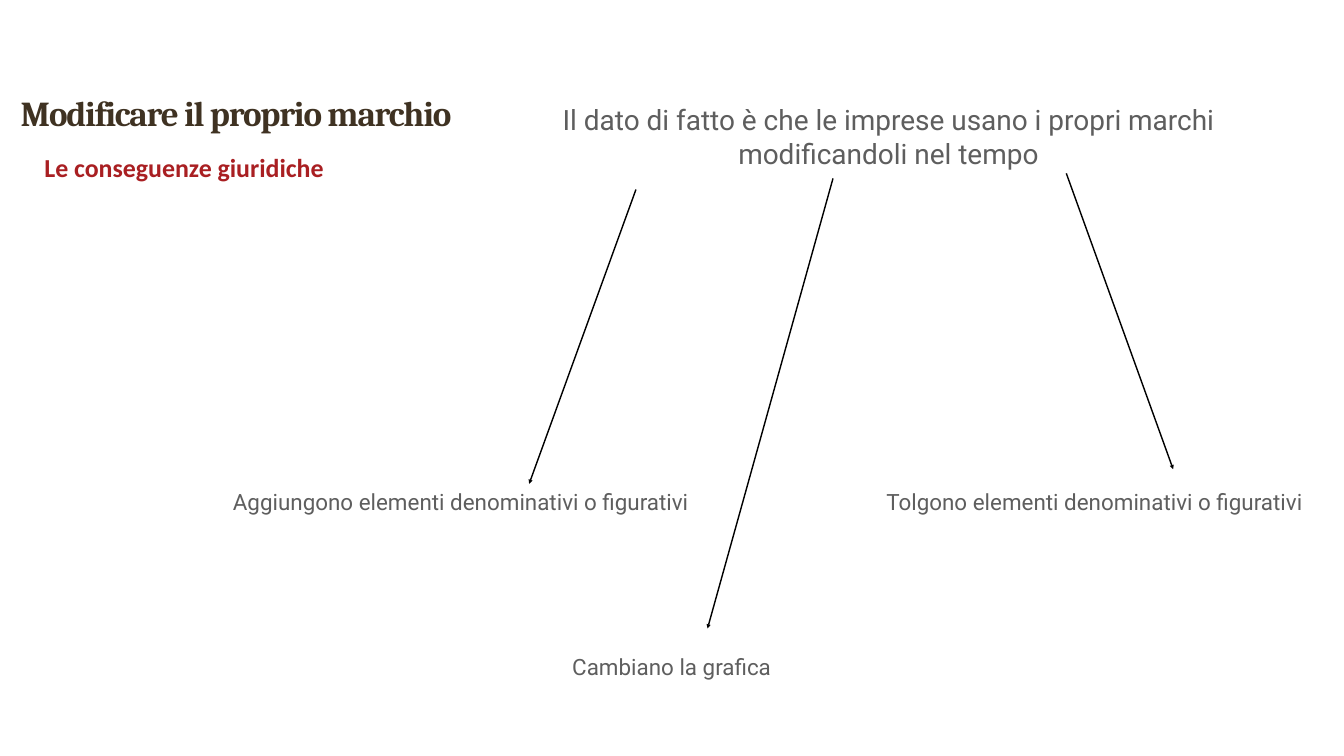
from lxml import etree
from pptx import Presentation
from pptx import util as u
from pptx.dml.color import RGBColor
from pptx.enum import shapes, text
from pptx.oxml import ns

PX = 9144  # EMU per px, 100 px to the inch
WIDTH, HEIGHT = 2667, 1500
INSET = 6
GREY, BROWN, RED, BLACK = "5E5E5E", "3F3222", "A91F22", "000000"


def px(length):
    return u.Emu(length * PX)


def colour(value):
    return RGBColor.from_string(value)


def add_text(page, words, left, top, width, height, *, size, font="Roboto",
             fill=GREY, bold=False, align=text.PP_ALIGN.CENTER,
             anchor=text.MSO_ANCHOR.MIDDLE, line_spacing=None, tracking=None):
    box = page.shapes.add_textbox(px(left), px(top), px(width), px(height))
    frame = box.text_frame
    frame.word_wrap = True
    frame.vertical_anchor = anchor
    frame.margin_left = frame.margin_right = px(INSET)
    frame.margin_top = frame.margin_bottom = px(INSET)
    para = frame.paragraphs[0]
    para.alignment = align
    if line_spacing:
        para.line_spacing = line_spacing
    span = para.add_run()
    span.text = words
    span.font.name = font
    span.font.size = u.Pt(size)
    span.font.bold = bold
    span.font.color.rgb = colour(fill)
    if tracking is not None:
        span.font._element.set("spc", str(round(tracking * 100)))


def add_arrow(page, start, end):
    arrow = page.shapes.add_connector(
        shapes.MSO_CONNECTOR.STRAIGHT, *map(px, start + end))
    arrow.line.color.rgb = colour(BLACK)
    arrow.line.width = u.Pt(2)
    etree.SubElement(arrow.line._get_or_add_ln(), ns.qn("a:tailEnd"),
                     type="triangle")
    etree.SubElement(arrow._element.spPr, ns.qn("a:effectLst"))


def add_heading(page, left, top):
    """Slide title with its subtitle below."""
    add_text(page, "Modificare il proprio marchio", left, top, 943, 106,
             size=50, font="Cambria", fill=BROWN, bold=True,
             align=text.PP_ALIGN.LEFT, anchor=text.MSO_ANCHOR.BOTTOM,
             line_spacing=0.8, tracking=-1.7)
    add_text(page, "Le conseguenze giuridiche", left + 47, top + 130, 602, 119,
             size=37, font="Calibri", fill=RED, bold=True,
             align=text.PP_ALIGN.LEFT, anchor=text.MSO_ANCHOR.TOP)


def add_diagram(page, left, top):
    """Statement on top, with an arrow down to each of its three cases."""
    add_text(page, "Il dato di fatto è che le imprese usano i propri marchi "
             "modificandoli nel tempo", left + 653, top, 1544, 147, size=40)

    # Label, its left, top and width, then arrow start and end
    branches = [
        ("Aggiungono elementi denominativi o figurativi",
         0, 766, 1153, (924, 179), (712, 763)),
        ("Tolgono elementi denominativi o figurativi",
         1362, 766, 944, (1778, 147), (1990, 734)),
        ("Cambiano la grafica",
         523, 1094, 944, (1315, 157), (1066, 1050)),
    ]
    for label, x, y, width, start, end in branches:
        add_arrow(page, (left + start[0], top + start[1]),
                  (left + end[0], top + end[1]))
        add_text(page, label, left + x, top + y, width, 65, size=32)


def main():
    deck = Presentation()
    deck.slide_width, deck.slide_height = px(WIDTH), px(HEIGHT)
    page = deck.slides.add_slide(deck.slide_layouts[6])
    add_heading(page, 35, 164)
    add_diagram(page, 338, 197)
    deck.save("out.pptx")


if __name__ == "__main__":
    main()
